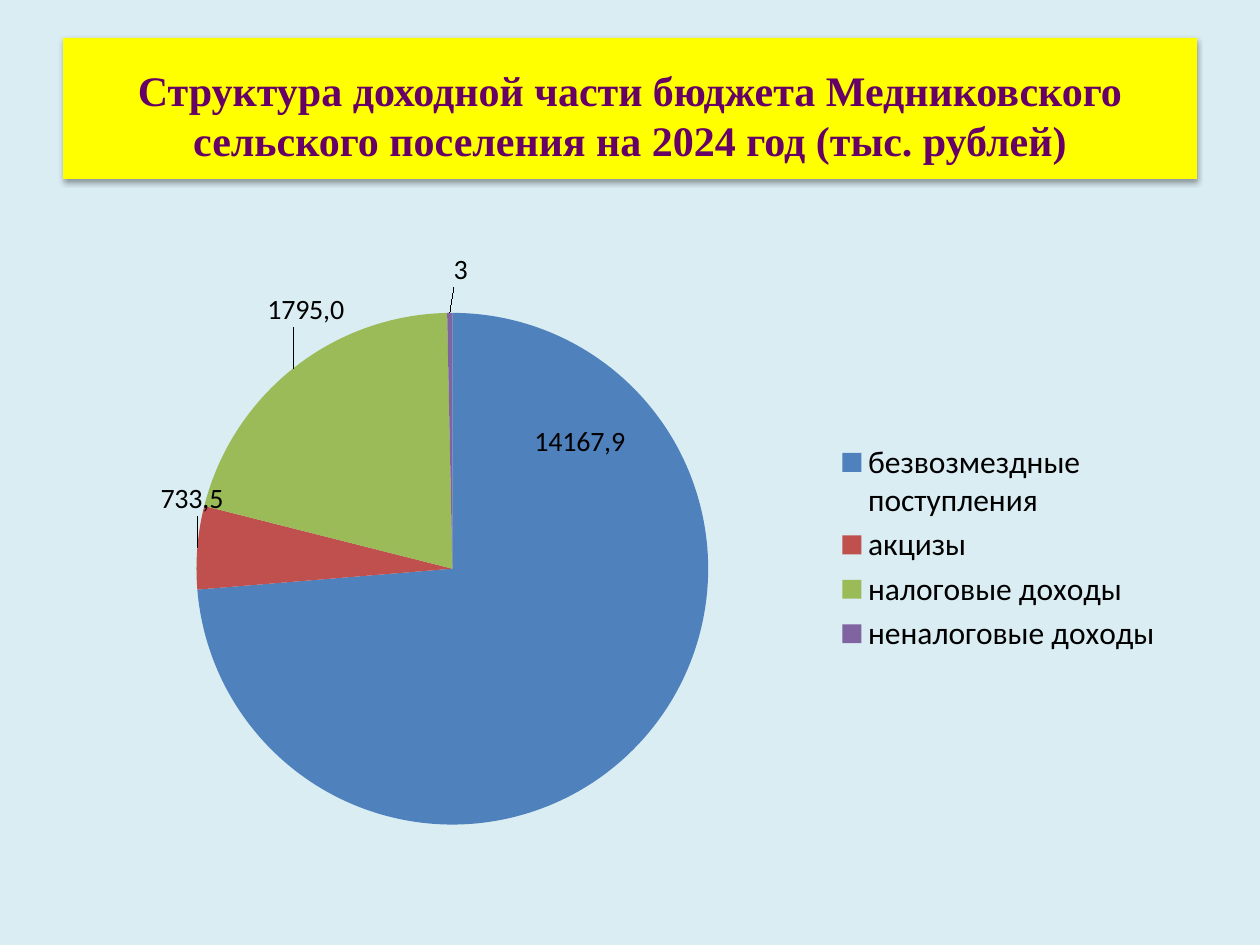
from lxml import etree
from pptx import Presentation
from pptx.chart.data import CategoryChartData
from pptx.dml.color import RGBColor
from pptx.enum.chart import XL_CHART_TYPE, XL_LEGEND_POSITION, XL_LABEL_POSITION as Position
from pptx.enum.text import MSO_ANCHOR, PP_ALIGN
from pptx.oxml import parse_xml
from pptx.oxml.ns import nsdecls, qn
from pptx.util import Inches, Pt

TITLE = "Структура доходной части бюджета Медниковского сельского поселения на 2024 год (тыс. рублей)"
BACKGROUND = RGBColor(0xDA, 0xED, 0xF3)
YELLOW = RGBColor(0xFF, 0xFF, 0x00)
PURPLE = RGBColor(0x66, 0x00, 0x66)
BLACK = RGBColor(0, 0, 0)

# Category, value, colour, label, label position, label shift as shares of the chart
INCOME = [
    ("безвозмездные поступления", 7215.2, RGBColor(0x4F, 0x81, 0xBD), "14167,9", Position.CENTER, (0.03, -0.36)),
    ("акцизы ", 514, RGBColor(0xC0, 0x50, 0x4D), "733,5", Position.OUTSIDE_END, (0.03, -0.08)),
    ("налоговые доходы", 2030, RGBColor(0x9B, 0xBB, 0x59), "1795,0", Position.OUTSIDE_END, (0.05, -0.06)),
    ("неналоговые доходы", 31.5, RGBColor(0x80, 0x64, 0xA2), "3", Position.OUTSIDE_END, (0.01, -0.03)),
]
PIE_AREA = {"x": 0.12, "y": 0.1, "w": 0.46, "h": 0.87}


def manual_layout(settings):
    layout = etree.Element(qn("c:layout"))
    manual = etree.SubElement(layout, qn("c:manualLayout"))
    for name, value in settings.items():
        etree.SubElement(manual, qn(f"c:{name}")).set("val", str(value))
    return layout


presentation = Presentation()
presentation.slide_width, presentation.slide_height = Inches(10), Inches(7.5)
slide = presentation.slides.add_slide(presentation.slide_layouts[5])
slide.background.fill.solid()
slide.background.fill.fore_color.rgb = BACKGROUND

# Title band
title = slide.shapes.title
title.left, title.top, title.width, title.height = map(Inches, (0.5, 0.3, 9, 1.12))
title.fill.solid()
title.fill.fore_color.rgb = YELLOW
title._element.spPr.append(parse_xml(
    f'<a:effectLst {nsdecls("a")}><a:outerShdw blurRad="39370" dist="22860" dir="5400000" rotWithShape="0">'
    '<a:srgbClr val="000000"><a:alpha val="35000"/></a:srgbClr></a:outerShdw></a:effectLst>'))
frame = title.text_frame
frame.text = TITLE
frame.word_wrap = True
frame.vertical_anchor = MSO_ANCHOR.MIDDLE
frame.margin_top = Inches(0.15)
paragraph = frame.paragraphs[0]
paragraph.alignment = PP_ALIGN.CENTER
font = paragraph.runs[0].font
font.name, font.size, font.bold = "Times New Roman", Pt(24), True
font.color.rgb = PURPLE

# Pie chart
chart_data = CategoryChartData()
chart_data.categories = [row[0] for row in INCOME]
chart_data.add_series("Series 1", [row[1] for row in INCOME])
chart = slide.shapes.add_chart(
    XL_CHART_TYPE.PIE, *map(Inches, (0.5, 2, 8.83, 4.7)), chart_data).chart
chart.has_title = False
chart.font.name, chart.font.size = "Calibri", Pt(10)
chart.font.color.rgb = BLACK
chart.has_legend = True
chart.legend.position = XL_LEGEND_POSITION.RIGHT
chart.legend.include_in_layout = False
chart.legend.font.size = Pt(18)

plot = chart.plots[0]
plot.vary_by_categories = True
plot_area = chart._chartSpace.chart.plotArea
for old_layout in plot_area.findall(qn("c:layout")):
    plot_area.remove(old_layout)
plot_area.insert(0, manual_layout(
    {"layoutTarget": "inner", "xMode": "edge", "yMode": "edge", **PIE_AREA}))

# Slices and their labels
series = plot.series[0]
series.data_labels.show_value = True
series.data_labels.font.size = Pt(16)
for index, (_, _, color, text, position, (shift_x, shift_y)) in enumerate(INCOME):
    point = series.points[index]
    point.format.fill.solid()
    point.format.fill.fore_color.rgb = color
    label = point.data_label
    label.text_frame.text = text
    label_font = label.text_frame.paragraphs[0].runs[0].font
    label_font.size = Pt(16)
    label_font.color.rgb = BLACK
    label.position = position
    label_element = series.data_labels._element.findall(qn("c:dLbl"))[index]
    for old_layout in label_element.findall(qn("c:layout")):
        label_element.remove(old_layout)
    label_element.insert(1, manual_layout({"x": shift_x, "y": shift_y}))

presentation.save("out.pptx")
